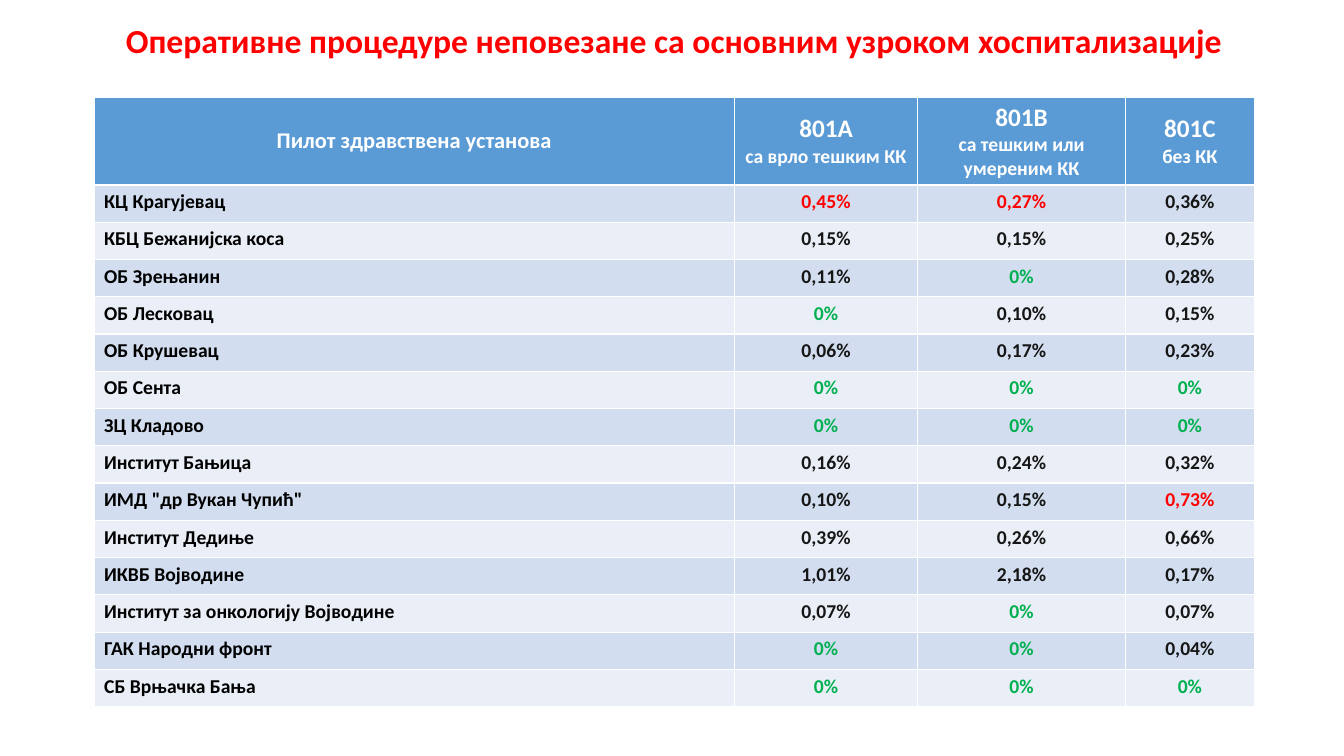
from dataclasses import dataclass

from pptx import Presentation
from pptx.dml.color import RGBColor
from pptx.enum.text import MSO_ANCHOR, PP_ALIGN
from pptx.util import Inches, Pt

CENTER, LEFT = PP_ALIGN.CENTER, PP_ALIGN.LEFT
MIDDLE, TOP = MSO_ANCHOR.MIDDLE, MSO_ANCHOR.TOP

FONT = "Calibri"
COLORS = {
    "header": "5B9BD5",
    "band_dark": "D2DEEF",
    "band_light": "EAEFF7",
    "white": "FFFFFF",
    "name": "000000",
    "rate": "161616",
    "high": "FF0000",
    "zero": "00B050",
}
SLIDE_WIDTH, SLIDE_HEIGHT = Inches(13.33), Inches(7.5)


@dataclass(frozen=True)
class Line:
    text: str
    size: int
    color: str
    align: PP_ALIGN = CENTER


@dataclass(frozen=True)
class Column:
    share: float  # percent of the slide width
    heading: tuple[tuple[str, int], ...]


@dataclass(frozen=True)
class Institution:
    name: str
    rates: tuple[str, str, str]
    high: tuple[int, ...] = ()  # positions of the rates marked as high


COLUMNS = (
    Column(47.64, (("Пилот здравствена установа", 16),)),
    Column(13.65, (("801А", 18), ("са врло тешким КК", 14))),
    Column(15.45, (("801B", 18), ("са тешким или умереним КК", 14))),
    Column(9.6, (("801C", 18), ("без КК", 14))),
)
INSTITUTIONS = (
    Institution("КЦ Крагујевац", ("0,45%", "0,27%", "0,36%"), high=(0, 1)),
    Institution("КБЦ Бежанијска коса", ("0,15%", "0,15%", "0,25%")),
    Institution("ОБ Зрењанин", ("0,11%", "0%", "0,28%")),
    Institution("ОБ Лесковац", ("0%", "0,10%", "0,15%")),
    Institution("ОБ Крушевац", ("0,06%", "0,17%", "0,23%")),
    Institution("ОБ Сента", ("0%", "0%", "0%")),
    Institution("ЗЦ Кладово", ("0%", "0%", "0%")),
    Institution("Институт Бањица", ("0,16%", "0,24%", "0,32%")),
    Institution('ИМД "др Вукан Чупић"', ("0,10%", "0,15%", "0,73%"), high=(2,)),
    Institution("Институт Дедиње", ("0,39%", "0,26%", "0,66%")),
    Institution("ИКВБ Војводине", ("1,01%", "2,18%", "0,17%")),
    Institution("Институт за онкологију Војводине", ("0,07%", "0%", "0,07%")),
    Institution("ГАК Народни фронт", ("0%", "0%", "0,04%")),
    Institution("СБ Врњачка Бања", ("0%", "0%", "0%")),
)
HEADER_SHARE, ROW_SHARE = 10.93, 4.93  # percent of the slide height


def across(percent: float) -> int:
    return round(SLIDE_WIDTH * percent / 100)


def down(percent: float) -> int:
    return round(SLIDE_HEIGHT * percent / 100)


def rgb(color: str) -> RGBColor:
    return RGBColor.from_string(COLORS[color])


def write(frame, lines: list[Line]) -> None:
    for index, line in enumerate(lines):
        paragraph = frame.add_paragraph() if index else frame.paragraphs[0]
        paragraph.text = line.text
        paragraph.alignment = line.align
        font = paragraph.font
        font.name, font.size, font.bold = FONT, Pt(line.size), True
        font.color.rgb = rgb(line.color)


def fill_cell(cell, lines: list[Line], fill: str, anchor: MSO_ANCHOR) -> None:
    cell.fill.solid()
    cell.fill.fore_color.rgb = rgb(fill)
    cell.vertical_anchor = anchor
    write(cell.text_frame, lines)


def rate_color(institution: Institution, position: int) -> str:
    if position in institution.high:
        return "high"
    return "zero" if institution.rates[position] == "0%" else "rate"


def add_title(slide) -> None:
    title = slide.shapes.add_textbox(across(5.3), 0, across(89.7), down(11.3))
    frame = title.text_frame
    frame.word_wrap = True
    frame.vertical_anchor = MIDDLE
    heading = "Оперативне процедуре неповезане са основним узроком хоспитализације"
    write(frame, [Line(heading, 24, "high")])
    frame.paragraphs[0].line_spacing = 0.9


def add_rates_table(slide) -> None:
    width = sum(column.share for column in COLUMNS)
    height = HEADER_SHARE + ROW_SHARE * len(INSTITUTIONS)
    rates = slide.shapes.add_table(
        len(INSTITUTIONS) + 1, len(COLUMNS),
        across(7), down(12.9), across(width), down(height),
    ).table

    # Header row
    rates.rows[0].height = down(HEADER_SHARE)
    for index, column in enumerate(COLUMNS):
        rates.columns[index].width = across(column.share)
        lines = [Line(text, size, "white") for text, size in column.heading]
        fill_cell(rates.cell(0, index), lines, "header", MIDDLE)

    # One banded row per institution
    for row, institution in enumerate(INSTITUTIONS, start=1):
        rates.rows[row].height = down(ROW_SHARE)
        band = "band_dark" if row % 2 else "band_light"
        lines = [Line(institution.name, 14, "name", LEFT)]
        lines += [
            Line(rate, 14, rate_color(institution, position))
            for position, rate in enumerate(institution.rates)
        ]
        for index, line in enumerate(lines):
            fill_cell(rates.cell(row, index), [line], band, TOP)


def main() -> None:
    deck = Presentation()
    deck.slide_width, deck.slide_height = SLIDE_WIDTH, SLIDE_HEIGHT
    slide = deck.slides.add_slide(deck.slide_layouts[6])
    add_title(slide)
    add_rates_table(slide)
    deck.save("out.pptx")


if __name__ == "__main__":
    main()
